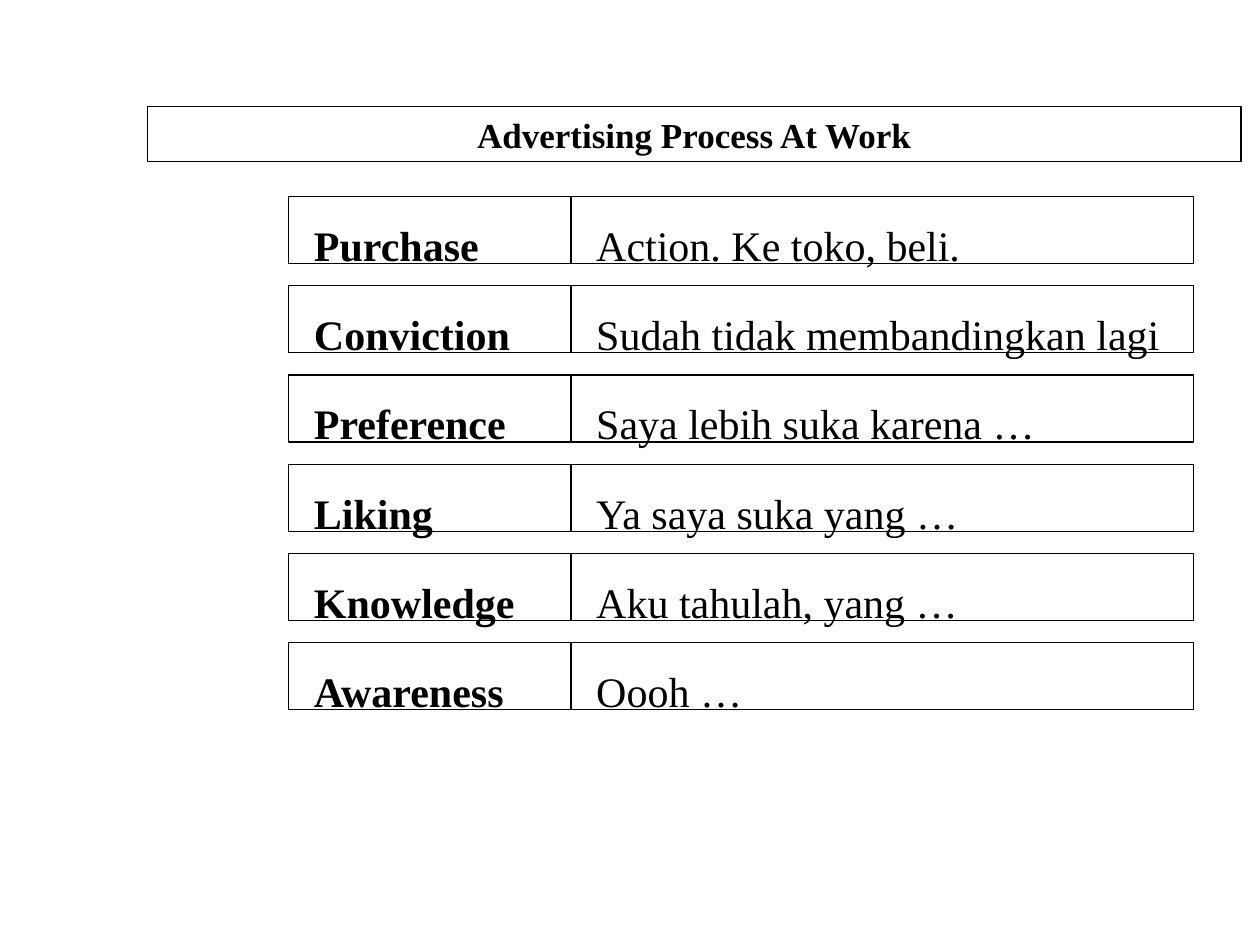
from dataclasses import dataclass

from pptx import Presentation
from pptx.dml.color import RGBColor
from pptx.enum.shapes import MSO_SHAPE as Shape
from pptx.enum.text import MSO_ANCHOR as Anchor, PP_ALIGN as Align
from pptx.slide import Slide
from pptx.util import Cm, Pt

BLACK = RGBColor(0, 0, 0)
FONT = "Times New Roman"

# Grid of the steps, in cm
TOP, PITCH, HIGH = 3.96, 1.8, 1.35
LEFT, STAGE_W, QUOTE_W = 5.82, 5.69, 12.55


@dataclass(frozen=True)
class Step:
    stage: str
    quote: str


STEPS = [
    Step("Purchase", "Action. Ke toko, beli."),
    Step("Conviction", "Sudah tidak membandingkan lagi"),
    Step("Preference", "Saya lebih suka karena …"),
    Step("Liking", "Ya saya suka yang …"),
    Step("Knowledge", "Aku tahulah, yang …"),
    Step("Awareness", "Oooh …"),
]


def add_box(slide: Slide, text: str, x: float, y: float, w: float, h: float, *,
            size: int = 24, bold: bool = False, align: Align = Align.LEFT,
            side: float = 0.51, top: float = 0.46, base: float = 0) -> None:
    """Draw an outlined box with one line of text; lengths are in cm."""
    box = slide.shapes.add_shape(Shape.RECTANGLE, Cm(x), Cm(y), Cm(w), Cm(h))
    box.shadow.inherit = False
    box.fill.background()
    box.line.color.rgb = BLACK
    box.line.width = Pt(0.75)

    frame = box.text_frame
    frame.word_wrap = True
    frame.vertical_anchor = Anchor.TOP
    frame.margin_left = frame.margin_right = Cm(side)
    frame.margin_top, frame.margin_bottom = Cm(top), Cm(base)

    para = frame.paragraphs[0]
    para.alignment = align
    run = para.add_run()
    run.text = text
    run.font.name = FONT
    run.font.size = Pt(size)
    run.font.bold = bold
    run.font.color.rgb = BLACK


def add_step(slide: Slide, step: Step, y: float) -> None:
    """Draw a stage beside what the buyer says at it."""
    add_box(slide, step.stage, LEFT, y, STAGE_W, HIGH, bold=True)
    add_box(slide, step.quote, LEFT + STAGE_W, y, QUOTE_W, HIGH)


def main() -> None:
    deck = Presentation()
    deck.slide_width, deck.slide_height = Cm(25.4), Cm(19.05)
    slide = deck.slides.add_slide(deck.slide_layouts[6])

    # Title
    add_box(slide, "Advertising Process At Work", 2.97, 2.15, 22.05, 1.11,
            size=20, bold=True, align=Align.CENTER,
            side=0.25, top=0.13, base=0.13)

    # Steps, from the last one down to the first
    for row, step in enumerate(STEPS):
        add_step(slide, step, TOP + row * PITCH)

    deck.save("out.pptx")


if __name__ == "__main__":
    main()
